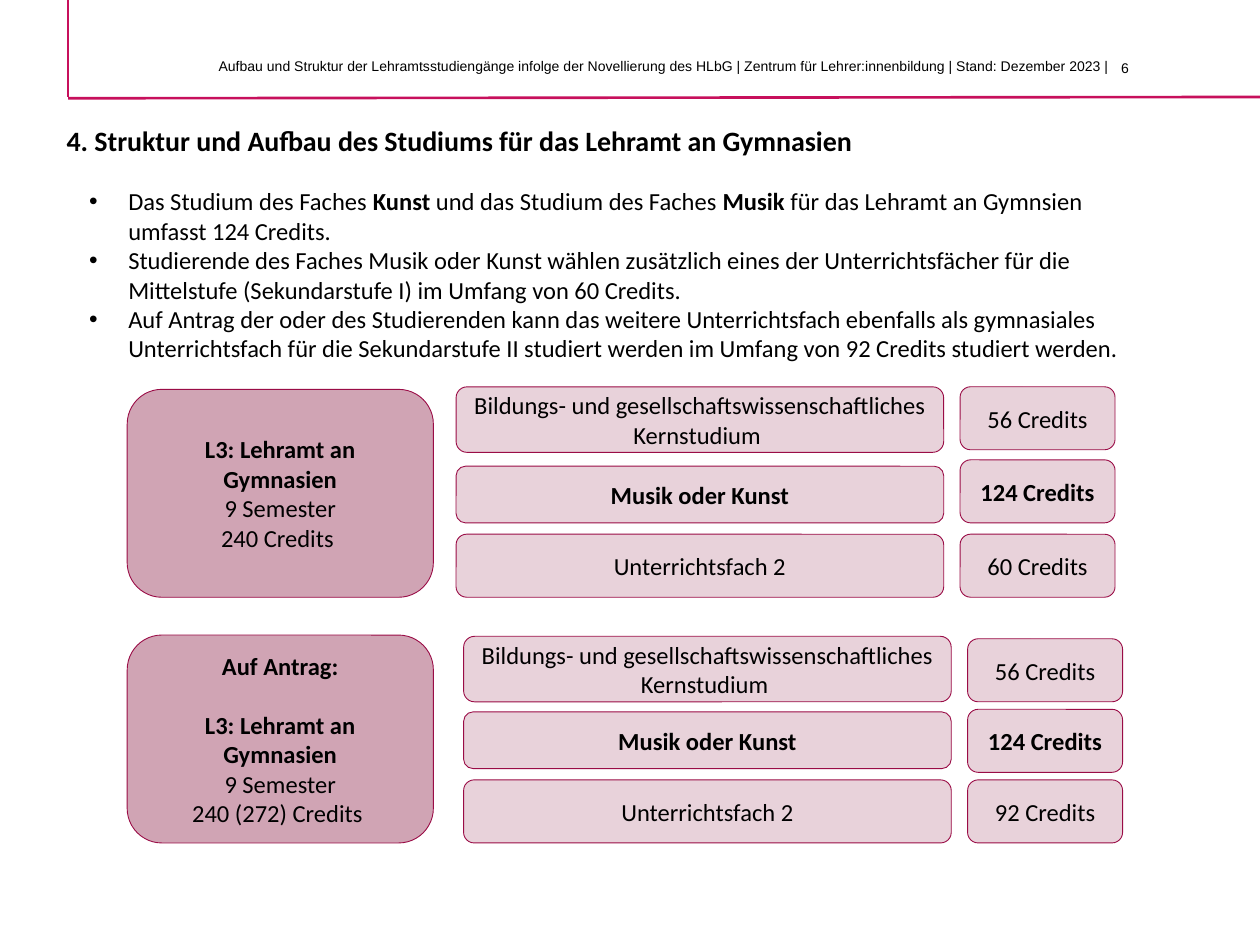
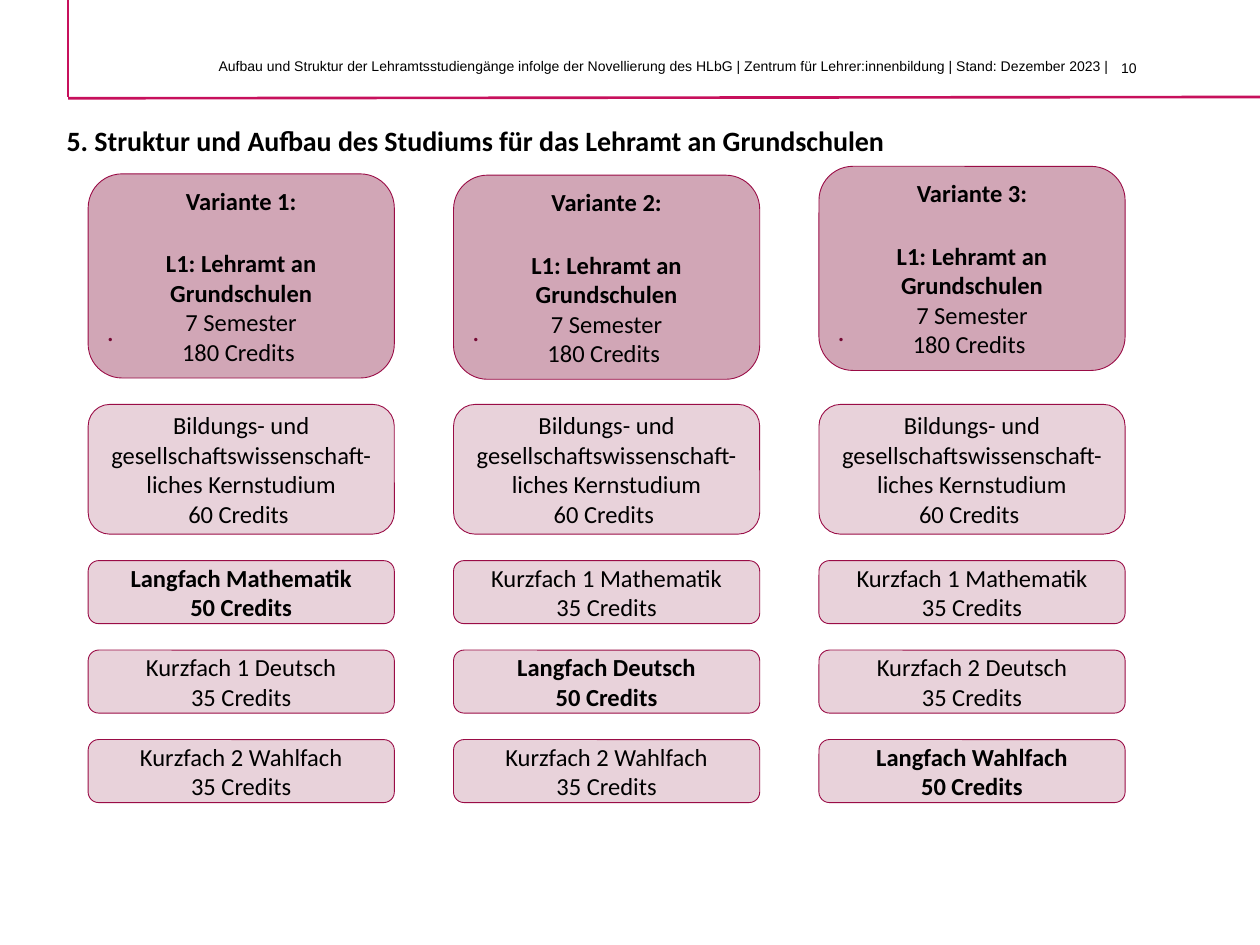
from lxml.etree import SubElement
from pptx import Presentation
from pptx.dml.color import RGBColor
from pptx.enum.shapes import MSO_CONNECTOR, MSO_SHAPE
from pptx.enum.text import MSO_ANCHOR, PP_ALIGN
from pptx.oxml.ns import qn
from pptx.util import Inches, Pt

# Content: a line is a list of (text, bold) spans
FOOTER = ("Aufbau und Struktur der Lehramtsstudiengänge infolge der Novellierung des HLbG | "
          "Zentrum für Lehrer:innenbildung | Stand: Dezember 2023 |")


def plain(*texts):
    return [[(text, False)] for text in texts]


def bold(*texts):
    return [[(text, True)] for text in texts]


GYMNASIUM_TITLE = "4. Struktur und Aufbau des Studiums für das Lehramt an Gymnasien"
GYMNASIUM_BULLETS = [
    [("Das Studium des Faches ", False), ("Kunst", True),
     (" und das Studium des Faches ", False), ("Musik", True),
     (" für das Lehramt an Gymnsien umfasst 124 Credits.", False)],
    *plain("Studierende des Faches Musik oder Kunst wählen zusätzlich eines der Unterrichtsfächer "
           "für die Mittelstufe (Sekundarstufe I) im Umfang von 60 Credits.",
           "Auf Antrag der oder des Studierenden kann das weitere Unterrichtsfach ebenfalls als "
           "gymnasiales Unterrichtsfach für die Sekundarstufe II studiert werden im Umfang von "
           "92 Credits studiert werden."),
]
SUBJECTS = [
    plain("Bildungs- und gesellschaftswissenschaftliches Kernstudium "),
    bold("Musik oder Kunst"),
    plain("Unterrichtsfach 2"),
]
L3 = bold("L3: Lehramt an Gymnasien") + plain("9 Semester")
# Rows are (top, height) in inches
MODELS = [
    {"degree": L3 + plain("240 Credits "), "gap": 0, "top": 3.09, "left": 3.62,
     "credits": [plain("56 Credits"), bold("124 Credits"), plain("60 Credits")],
     "subject_rows": [(3.07, 0.52), (3.7, 0.45), (4.24, 0.5)],
     "credit_tops": [3.07, 3.65, 4.24]},
    {"degree": bold("Auf Antrag:") + L3 + plain("240 (272) Credits "), "gap": 17,
     "top": 5.04, "left": 3.68,
     "credits": [plain("56 Credits"), bold("124 Credits"), plain("92 Credits")],
     "subject_rows": [(5.05, 0.52), (5.65, 0.45), (6.19, 0.5)],
     "credit_tops": [5.07, 5.63, 6.19]},
]

PRIMARY_TITLE = "5. Struktur und Aufbau des Studiums für das Lehramt an Grundschulen"
L1 = bold("L1: Lehramt an Grundschulen") + plain("7 Semester", "180 Credits ")
CORE = plain("Bildungs- und gesellschaftswissenschaft-liches Kernstudium", "60 Credits ")
VARIANTS = [
    ("Variante 1:", 1.38, [bold("Langfach Mathematik", "50 Credits"),
                           plain("Kurzfach 1 Deutsch", "35 Credits"),
                           plain("Kurzfach 2 Wahlfach", "35 Credits")]),
    ("Variante 2:", 1.39, [plain("Kurzfach 1 Mathematik", "35 Credits"),
                           bold("Langfach Deutsch", "50 Credits"),
                           plain("Kurzfach 2 Wahlfach", "35 Credits")]),
    ("Variante 3:", 1.32, [plain("Kurzfach 1 Mathematik", "35 Credits"),
                           plain("Kurzfach 2 Deutsch", "35 Credits"),
                           bold("Langfach Wahlfach", "50 Credits")]),
]

# Shared look and grid
BLACK = RGBColor(0x00, 0x00, 0x00)
MAGENTA = RGBColor(0xC7, 0x10, 0x5C)
BORDER = RGBColor(0x9A, 0x0C, 0x46)
DEGREE_FILL = RGBColor(0xD0, 0xA4, 0xB4)
SUBJECT_FILL = RGBColor(0xE8, 0xD2, 0xDA)
DOT = RGBColor(0x74, 0x09, 0x34)
HEADER_RULES = [(0.54, 0, 0.54, 0.77), (0.54, 0.78, 10, 0.77)]
DEGREE_WIDTH = 2.43
SUBJECT_WIDTH, CREDIT_WIDTH, CREDIT_SHIFT = 3.87, 1.23, 4
ROW_HEIGHT = 0.5
VARIANT_LEFT, VARIANT_STEP = 0.7, 2.9
SUBJECT_TOP, SUBJECT_STEP = 4.45, 0.71


def write(frame, lines, size, align=PP_ALIGN.LEFT, font="Calibri", color=BLACK, bullet=False):
    frame.word_wrap = True
    for index, line in enumerate(lines):
        para = frame.paragraphs[0] if index == 0 else frame.add_paragraph()
        para.alignment = align
        if bullet:
            properties = para._p.get_or_add_pPr()
            properties.set("marL", str(Inches(0.31)))
            properties.set("indent", str(-Inches(0.31)))
            SubElement(properties, qn("a:buFont")).set("typeface", "Arial")
            SubElement(properties, qn("a:buChar")).set("char", "•")
        for text, is_bold in line:
            span = para.add_run()
            span.text = text
            span.font.name, span.font.size = font, Pt(size)
            span.font.bold, span.font.color.rgb = is_bold, color


def add_text(page, area, lines, size, **style):
    box = page.shapes.add_textbox(*map(Inches, area))
    write(box.text_frame, lines, size, **style)
    return box


def add_card(page, area, lines, fill, gap=0, opacity=100):
    """Rounded card with centred text; gap is the space after the first line."""
    card = page.shapes.add_shape(MSO_SHAPE.ROUNDED_RECTANGLE, *map(Inches, area))
    card.shadow.inherit = False
    card.fill.solid()
    card.fill.fore_color.rgb = fill
    if opacity < 100:
        color = card._element.spPr.find(qn("a:solidFill"))[0]
        SubElement(color, qn("a:alpha")).set("val", str(opacity * 1000))
    card.line.color.rgb = BORDER
    card.line.width = Pt(0.5)
    frame = card.text_frame
    frame.vertical_anchor = MSO_ANCHOR.MIDDLE
    frame.margin_top = frame.margin_bottom = 0
    write(frame, lines, 14, align=PP_ALIGN.CENTER)
    if gap:
        frame.paragraphs[0].space_after = Pt(gap)


def add_page(deck, number, title):
    page = deck.slides.add_slide(deck.slide_layouts[6])
    for ends in HEADER_RULES:
        rule = page.shapes.add_connector(MSO_CONNECTOR.STRAIGHT, *map(Inches, ends))
        rule.line.color.rgb = MAGENTA
        rule.line.width = Pt(1.5)
        SubElement(rule._element.spPr, qn("a:effectLst"))
    add_text(page, (8.8, 0.42, 0.5, 0.28), plain(number), 8, font="Arial")
    add_text(page, (1.31, 0.41, 7.6, 0.28), plain(FOOTER), 8, font="Arial", align=PP_ALIGN.RIGHT)
    add_text(page, (0.43, 0.93, 8.48, 0.37), bold(title), 16)
    return page


def build_gymnasium(deck):
    page = add_page(deck, "6", GYMNASIUM_TITLE)
    add_text(page, (0.61, 1.43, 8.55, 1.51), GYMNASIUM_BULLETS, 14, bullet=True)
    for model in MODELS:
        left = model["left"]
        add_card(page, (1.01, model["top"], DEGREE_WIDTH, 1.65), model["degree"],
                 DEGREE_FILL, model["gap"])
        for subject, (top, height) in zip(SUBJECTS, model["subject_rows"]):
            add_card(page, (left, top, SUBJECT_WIDTH, height), subject, SUBJECT_FILL)
        for credit, top in zip(model["credits"], model["credit_tops"]):
            add_card(page, (left + CREDIT_SHIFT, top, CREDIT_WIDTH, ROW_HEIGHT), credit,
                     SUBJECT_FILL)


def build_primary(deck):
    page = add_page(deck, "10", PRIMARY_TITLE)
    for column, (name, top, subjects) in enumerate(VARIANTS):
        left = VARIANT_LEFT + column * VARIANT_STEP
        add_card(page, (left, top, DEGREE_WIDTH, 1.62), bold(name) + L1, DEGREE_FILL,
                 gap=19, opacity=97)
        add_card(page, (left, 3.21, DEGREE_WIDTH, 1.03), CORE, SUBJECT_FILL)
        add_text(page, (left + 0.05, 2.44, 0.4, 0.37), plain("."), 16, color=DOT)
        for row, subject in enumerate(subjects):
            add_card(page, (left, SUBJECT_TOP + row * SUBJECT_STEP, DEGREE_WIDTH, ROW_HEIGHT),
                     subject, SUBJECT_FILL)


def main():
    deck = Presentation()
    deck.slide_width, deck.slide_height = Inches(10), Inches(7.5)
    build_gymnasium(deck)
    build_primary(deck)
    deck.save("out.pptx")


if __name__ == "__main__":
    main()
